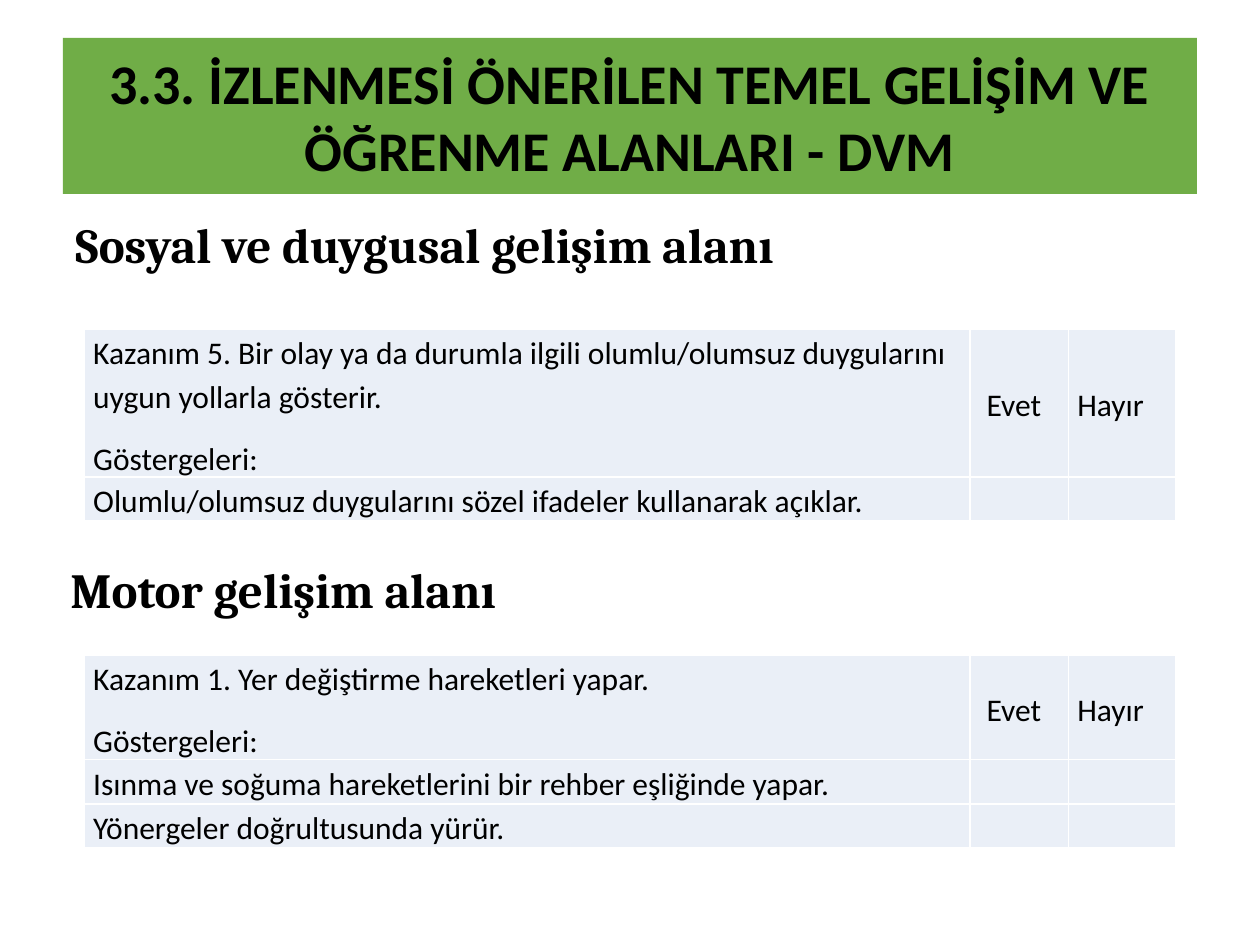
from lxml import etree
from pptx import Presentation
from pptx.dml.color import RGBColor
from pptx.enum import shapes, text
from pptx.oxml import ns
from pptx.util import Inches, Pt

BLACK = RGBColor(0, 0, 0)
WHITE = RGBColor(0xFF, 0xFF, 0xFF)
GREEN = RGBColor(0x70, 0xAD, 0x47)
PALE = RGBColor(0xEA, 0xEF, 0xF7)
MIDDLE = text.MSO_ANCHOR.MIDDLE

SOCIAL = [
    (1.17, ["Kazanım 5. Bir olay ya da durumla ilgili olumlu/olumsuz "
            "duygularını uygun yollarla gösterir.", "Göstergeleri:"]),
    (0.35, ["Olumlu/olumsuz duygularını sözel ifadeler kullanarak açıklar."]),
]
MOTOR = [
    (0.82, ["Kazanım 1. Yer değiştirme hareketleri yapar.", "Göstergeleri:"]),
    (0.35, ["Isınma ve soğuma hareketlerini bir rehber eşliğinde yapar."]),
    (0.35, ["Yönergeler doğrultusunda yürür."]),
]


class Page:
    body, serif = "Calibri", "Cambria"
    cols = (7.03, 0.78, 0.85)

    def __init__(self, slide):
        self.slide = slide

    def style(self, para, face, size, bold=False):
        font = para.font
        font.name, font.size, font.bold = face, Pt(size), bold
        font.color.rgb = BLACK

    def banner(self, words, *box):
        shape = self.slide.shapes.add_shape(
            shapes.MSO_SHAPE.RECTANGLE, *map(Inches, box))
        shape.shadow.inherit = False
        shape.fill.solid()
        shape.fill.fore_color.rgb = GREEN
        shape.line.fill.background()
        frame = shape.text_frame
        frame.word_wrap = True
        frame.vertical_anchor = MIDDLE
        frame.text = words
        para = frame.paragraphs[0]
        para.alignment = text.PP_ALIGN.CENTER
        self.style(para, self.body, 32, True)

    def heading(self, words, left, top):
        box = self.slide.shapes.add_textbox(
            Inches(left), Inches(top), Inches(6.07), Inches(1.08))
        frame = box.text_frame
        frame.word_wrap = True
        frame.margin_top, frame.margin_bottom = Inches(0.14), 0
        frame.text = words
        self.style(frame.paragraphs[0], self.serif, 28, True)

    def border(self, cell):
        """Draw thin white lines on all four sides."""
        props = cell._tc.get_or_add_tcPr()
        for spot, side in enumerate(("lnL", "lnR", "lnT", "lnB")):
            line = etree.Element(ns.qn("a:" + side), w=str(Pt(1)))
            fill = etree.SubElement(line, ns.qn("a:solidFill"))
            etree.SubElement(fill, ns.qn("a:srgbClr"), val=str(WHITE))
            props.insert(spot, line)

    def cell(self, cell, lines, left=0.07):
        cell.fill.solid()
        cell.fill.fore_color.rgb = PALE
        cell.margin_left, cell.margin_right = Inches(left), Inches(0.07)
        cell.margin_top = cell.margin_bottom = 0
        cell.vertical_anchor = MIDDLE
        cell.text = "\n".join(lines)
        for para in cell.text_frame.paragraphs:
            para.line_spacing, para.space_after = 1.15, Pt(10)
            self.style(para, self.body, 18)
        self.border(cell)

    def table(self, rows, left, top):
        high = sum(row[0] for row in rows)
        grid = self.slide.shapes.add_table(
            len(rows), len(self.cols), Inches(left), Inches(top),
            Inches(sum(self.cols)), Inches(high)).table
        grid.first_row = grid.horz_banding = False
        for col, width in zip(grid.columns, self.cols):
            col.width = Inches(width)
        for r, (height, lines) in enumerate(rows):
            grid.rows[r].height = Inches(height)
            self.cell(grid.cell(r, 0), lines)
            yes, no = ("Evet", "Hayır") if r == 0 else ("", "")
            self.cell(grid.cell(r, 1), [yes], 0.13)
            self.cell(grid.cell(r, 2), [no])


def main():
    deck = Presentation()
    deck.slide_width, deck.slide_height = Inches(10), Inches(7.5)
    page = Page(deck.slides.add_slide(deck.slide_layouts[6]))
    page.banner("3.3. İZLENMESİ ÖNERİLEN TEMEL GELİŞİM VE "
                "ÖĞRENME ALANLARI - DVM", 0.5, 0.3, 9, 1.24)
    page.heading("Sosyal ve duygusal gelişim alanı", 0.5, 1.56)
    page.table(SOCIAL, 0.67, 2.61)
    page.heading("Motor gelişim alanı", 0.46, 4.3)
    page.table(MOTOR, 0.67, 5.2)
    deck.save("out.pptx")


if __name__ == "__main__":
    main()
